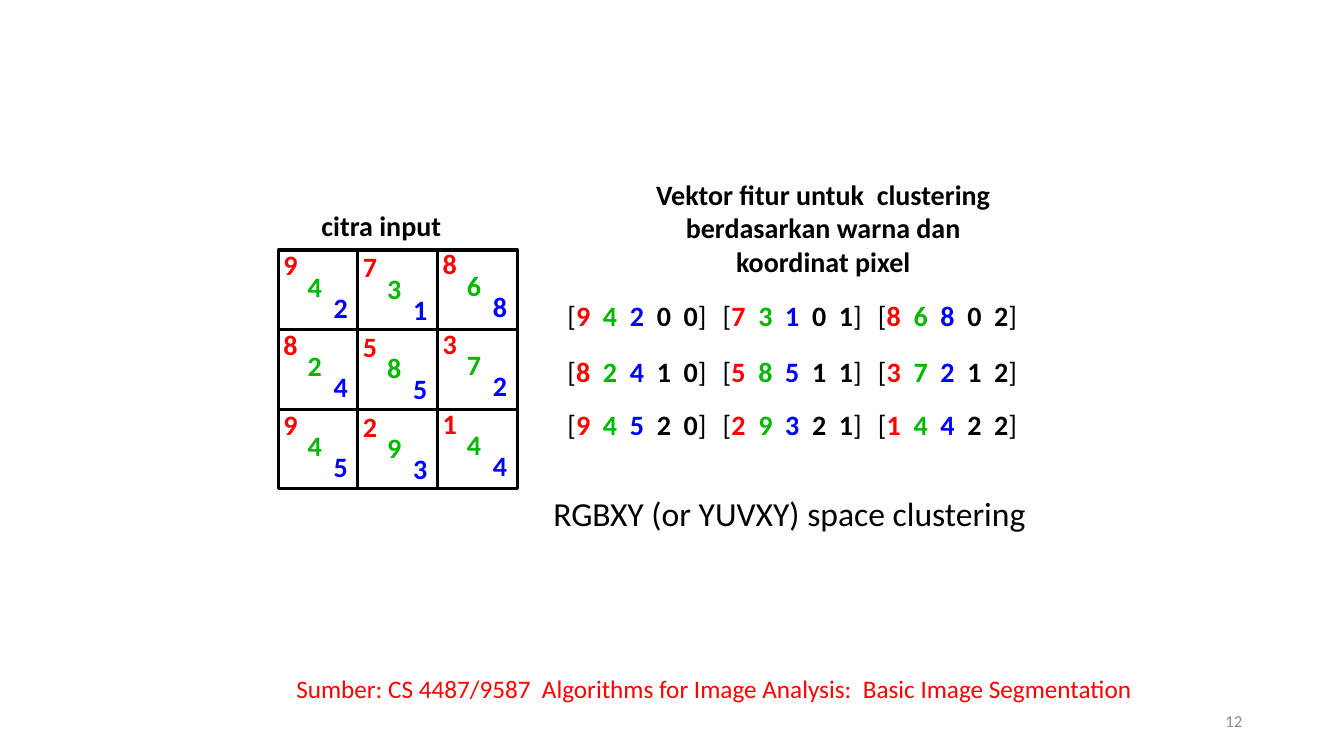
from dataclasses import dataclass

from pptx import Presentation
from pptx.dml.color import RGBColor
from pptx.enum.shapes import MSO_SHAPE
from pptx.enum.text import MSO_ANCHOR, MSO_AUTO_SIZE, PP_ALIGN
from pptx.util import Emu, Pt

RECTANGLE = MSO_SHAPE.RECTANGLE
LEFT, CENTER, RIGHT = PP_ALIGN.LEFT, PP_ALIGN.CENTER, PP_ALIGN.RIGHT
TOP, MIDDLE = MSO_ANCHOR.TOP, MSO_ANCHOR.MIDDLE
GROW, FIXED = MSO_AUTO_SIZE.SHAPE_TO_FIT_TEXT, MSO_AUTO_SIZE.NONE

PX = 9144
COLORS = {
    "black": "000000",
    "red": "FF0000",
    "green": "00B800",
    "blue": "0000FF",
    "gray": "8C8C8C",
}

PIXELS = [
    [(9, 4, 2), (7, 3, 1), (8, 6, 8)],
    [(8, 2, 4), (5, 8, 5), (3, 7, 2)],
    [(9, 4, 5), (2, 9, 3), (1, 4, 4)],
]
CELL = 79
GRID_LEFT, GRID_TOP = 276, 248
COLUMN_SHIFTS = [0, 2, -1]
VECTOR_LEFT, VECTOR_STEP = 553, 154
VECTOR_TOPS = [291, 347, 399]


@dataclass(frozen=True)
class Span:
    text: str
    color: str = "black"
    bold: bool = False


@dataclass(frozen=True)
class Label:
    left: int
    top: int
    width: int
    height: int
    spans: tuple[Span, ...]
    size: int = 20
    wrap: bool = True
    align: PP_ALIGN = LEFT
    anchor: MSO_ANCHOR = TOP
    fit: MSO_AUTO_SIZE = GROW
    inset: int = 10


@dataclass(frozen=True)
class Channel:
    color: str
    dx: int
    dy: int
    width: int
    inset: int


CHANNELS = [
    Channel("red", -11, -7, 41, 16),
    Channel("green", 13, 14, 41, 16),
    Channel("blue", 45, 35, 34, 10),
]

CAPTIONS = [
    Label(309, 202, 152, 44, (Span("citra input", bold=True),), wrap=False),
    Label(635, 171, 363, 111,
          (Span("Vektor fitur untuk  clustering berdasarkan warna dan koordinat pixel",
                bold=True),), align=CENTER),
    Label(539, 484, 506, 50, (Span("RGBXY (or YUVXY) space clustering"),),
          size=24, wrap=False),
    Label(284, 663, 1038, 40,
          (Span("Sumber: CS 4487/9587  Algorithms for Image Analysis:  "
                "Basic Image Segmentation", "red"),), size=18),
    Label(942, 695, 300, 40, (Span("12", "gray"),), size=12,
          align=RIGHT, anchor=MIDDLE, fit=FIXED),
]


def px(length: int) -> Emu:
    return Emu(length * PX)


def rgb(name: str) -> RGBColor:
    return RGBColor.from_string(COLORS[name])


def apply_format(target, values: dict) -> None:
    for attribute, value in values.items():
        setattr(target, attribute, value)


def draw_label(slide, label: Label) -> None:
    box = slide.shapes.add_textbox(
        px(label.left), px(label.top), px(label.width), px(label.height))
    frame = box.text_frame
    apply_format(frame, {
        "word_wrap": label.wrap,
        "auto_size": label.fit,
        "vertical_anchor": label.anchor,
        "margin_left": px(label.inset),
    })
    line = frame.paragraphs[0]
    line.alignment = label.align
    for span in label.spans:
        run = line.add_run()
        run.text = span.text
        apply_format(run.font, {
            "name": "Calibri", "size": Pt(label.size), "bold": span.bold})
        run.font.color.rgb = rgb(span.color)


def draw_pixel(slide, row: int, column: int, values: tuple[int, ...]) -> None:
    left, top = GRID_LEFT + column * CELL, GRID_TOP + row * CELL
    cell = slide.shapes.add_shape(RECTANGLE, px(left), px(top), px(CELL), px(CELL))
    cell.shadow.inherit = False
    cell.fill.background()
    cell.line.color.rgb = rgb("black")
    cell.line.width = Pt(2.25)
    for channel, value in zip(CHANNELS, values):
        draw_label(slide, Label(
            left + channel.dx, top + channel.dy + COLUMN_SHIFTS[column],
            channel.width, 44, (Span(str(value), channel.color, True),),
            wrap=False, inset=channel.inset))


def draw_vector(slide, row: int, column: int, values: tuple[int, ...]) -> None:
    features = [Span(f"{value}  ", channel.color, True)
                for channel, value in zip(CHANNELS, values)]
    coordinates = Span(f"{row}  {column}", bold=True)
    draw_label(slide, Label(
        VECTOR_LEFT + column * VECTOR_STEP, VECTOR_TOPS[row], 180, 44,
        (Span("["), *features, coordinates, Span("]"))))


def main() -> None:
    deck = Presentation()
    apply_format(deck, {"slide_width": px(1333), "slide_height": px(750)})
    slide = deck.slides.add_slide(deck.slide_layouts.get_by_name("Blank"))
    for draw in (draw_pixel, draw_vector):
        for row, pixels in enumerate(PIXELS):
            for column, values in enumerate(pixels):
                draw(slide, row, column, values)
    for caption in CAPTIONS:
        draw_label(slide, caption)
    deck.save("out.pptx")


if __name__ == "__main__":
    main()
